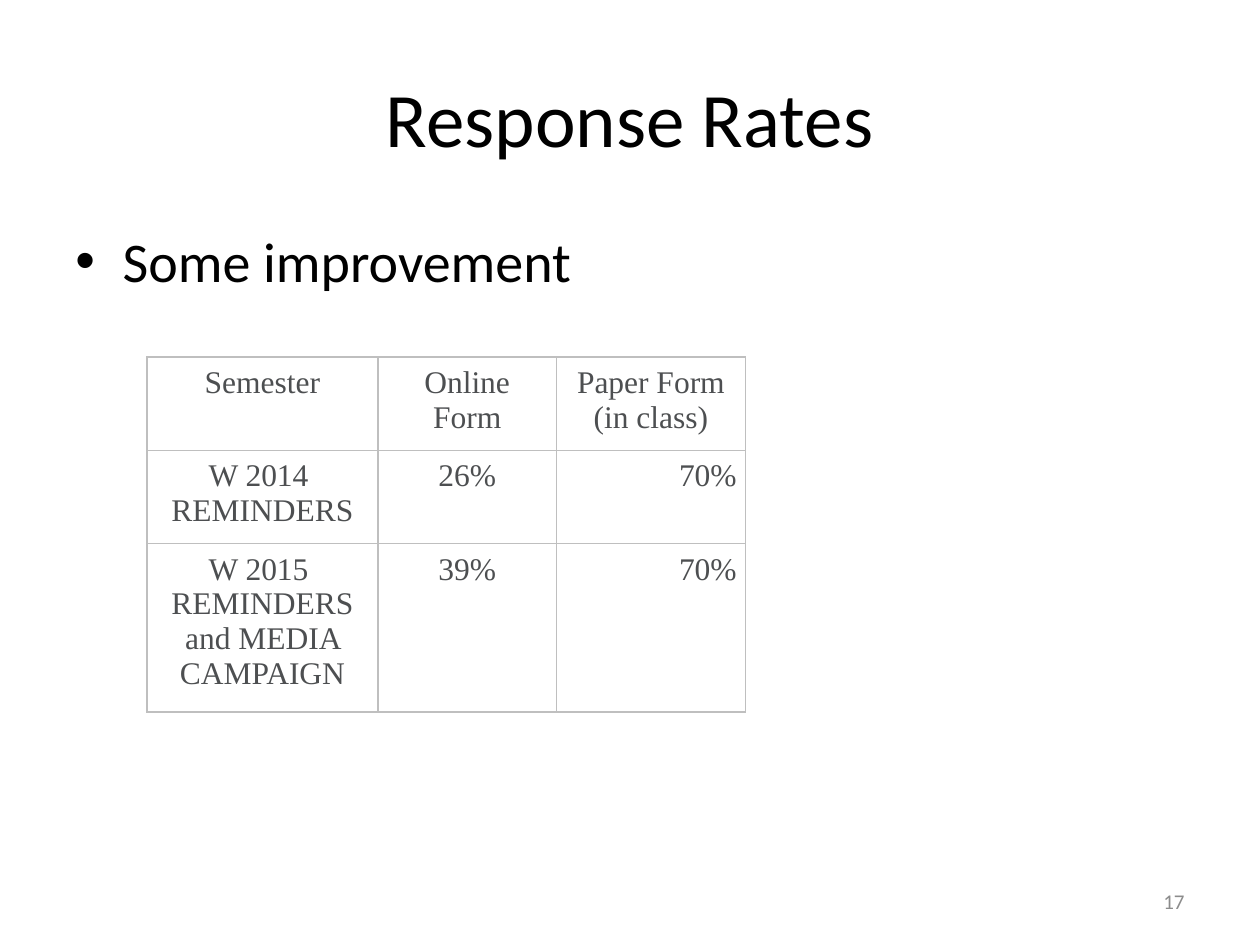
"""Build the Response Rates slide with its bullet and table."""
from lxml.etree import SubElement
from pptx import Presentation
from pptx.dml.color import RGBColor
from pptx.enum.text import MSO_ANCHOR, PP_ALIGN
from pptx.oxml.ns import qn
from pptx.util import Pt

BLACK = RGBColor(0x00, 0x00, 0x00)
GRAY = RGBColor(0x8C, 0x8C, 0x8C)
SLATE = RGBColor(0x4D, 0x4F, 0x51)
BORDER = RGBColor(0xBF, 0xBF, 0xBF)


def write(frame, text, *, size, font="Calibri", color=BLACK, align=PP_ALIGN.LEFT):
    for index, line in enumerate(text.split("\n")):
        para = frame.add_paragraph() if index else frame.paragraphs[0]
        para.alignment = align
        span = para.add_run()
        span.text = line
        span.font.size = Pt(size)
        span.font.name = font
        span.font.color.rgb = color


class SlideBuilder:
    def __init__(self, page):
        self.page = page
        self.table_font = "Times New Roman"
        self.table_size = 18
        self.cell_margin = Pt(5)

    def text(self, text, left, top, width, height, anchor=MSO_ANCHOR.MIDDLE, **style):
        box = self.page.shapes.add_textbox(Pt(left), Pt(top), Pt(width), Pt(height))
        frame = box.text_frame
        frame.word_wrap = True
        frame.vertical_anchor = anchor
        write(frame, text, **style)
        return frame

    def bullet(self, text, left, top, width, height, size, indent=27):
        frame = self.text(text, left, top, width, height, MSO_ANCHOR.TOP, size=size)
        para = frame.paragraphs[0]
        para.space_before = Pt(size * 0.2)
        properties = para._p.get_or_add_pPr()
        properties.set("marL", str(Pt(indent)))
        properties.set("indent", str(-Pt(indent)))
        SubElement(properties, qn("a:buFont"), typeface="Arial")
        SubElement(properties, qn("a:buChar"), char="•")

    def border(self, cell):
        properties = cell._tc.get_or_add_tcPr()
        for position, side in enumerate(("a:lnL", "a:lnR", "a:lnT", "a:lnB")):
            line = properties.makeelement(qn(side), {"w": str(Pt(0.75))})
            fill = SubElement(line, qn("a:solidFill"))
            SubElement(fill, qn("a:srgbClr"), val=str(BORDER))
            properties.insert(position, line)

    def table(self, rows, left, top, widths, heights, aligns):
        frame = self.page.shapes.add_table(
            len(rows), len(widths), Pt(left), Pt(top), Pt(sum(widths)), Pt(sum(heights)))
        table = frame.table
        table.first_row = table.horz_banding = False
        for column, width in zip(table.columns, widths):
            column.width = Pt(width)
        for row, height in zip(table.rows, heights):
            row.height = Pt(height)
        for r, values in enumerate(rows):
            for c, value in enumerate(values):
                cell = table.cell(r, c)
                cell.fill.background()
                cell.margin_left = cell.margin_right = self.cell_margin
                cell.margin_top = cell.margin_bottom = self.cell_margin
                write(cell.text_frame, value, size=self.table_size, font=self.table_font,
                      color=SLATE, align=aligns[c] if r else PP_ALIGN.CENTER)
                self.border(cell)


def main():
    deck = Presentation()
    deck.slide_width, deck.slide_height = Pt(720), Pt(540)
    builder = SlideBuilder(deck.slides.add_slide(deck.slide_layouts[6]))
    builder.text("Response Rates", 36, 21.6, 648, 90, size=44, align=PP_ALIGN.CENTER)
    builder.bullet("Some improvement", 36, 126, 648, 294, size=32)
    builder.text("17", 516, 500.5, 168, 28.8, size=12, color=GRAY, align=PP_ALIGN.RIGHT)
    builder.table(
        [("Semester", "Online Form", "Paper Form (in class)"),
         ("W 2014 \nREMINDERS", "26%", "70%"),
         ("W 2015 \nREMINDERS and MEDIA CAMPAIGN", "39%", "70%")],
        84, 204, (132, 102, 108), (50.2, 50.2, 90.2),
        (PP_ALIGN.CENTER, PP_ALIGN.CENTER, PP_ALIGN.RIGHT))
    deck.save("out.pptx")


if __name__ == "__main__":
    main()
